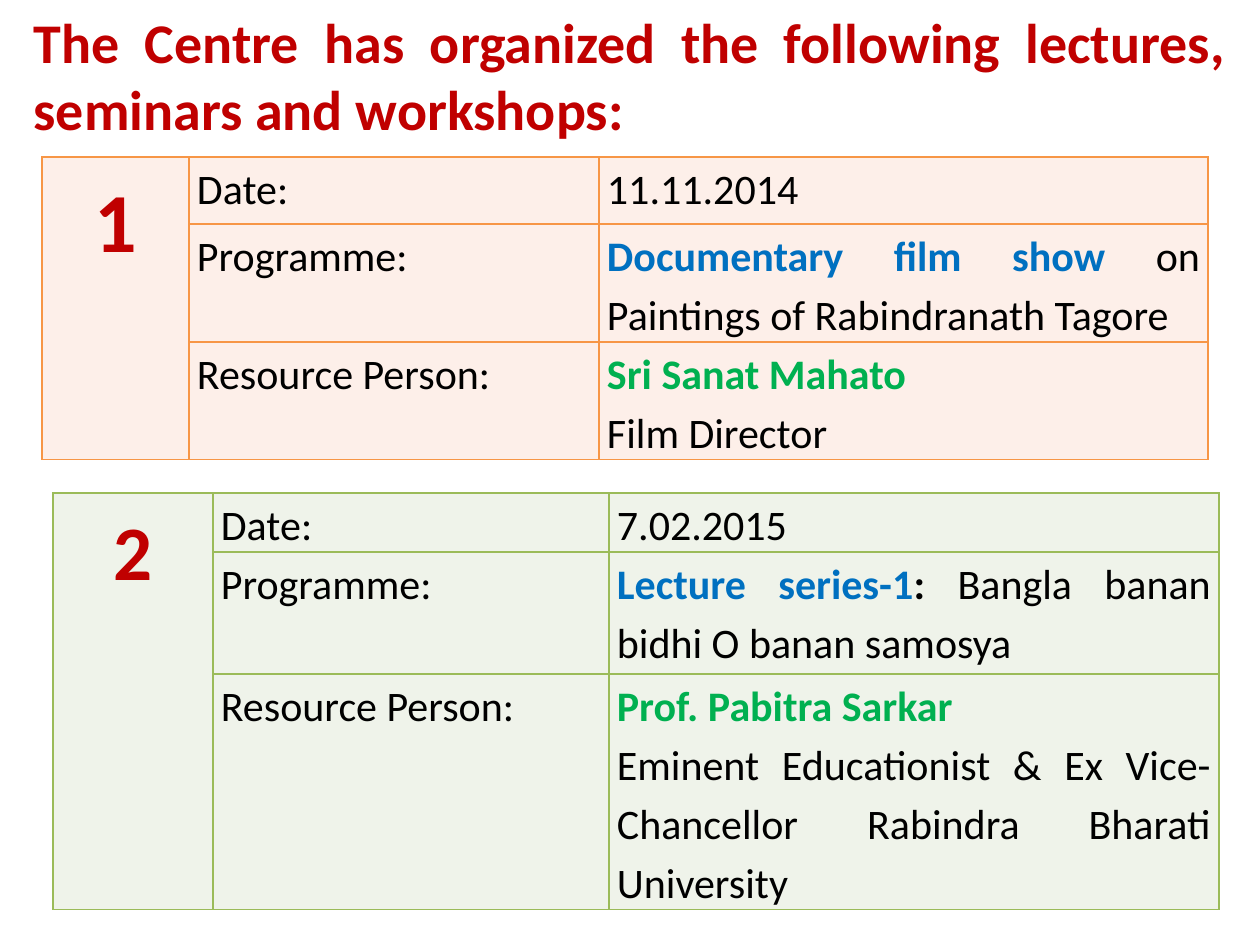
from lxml import etree
from pptx import Presentation, util as u
from pptx.dml.color import RGBColor
from pptx.enum import text
from pptx.oxml.ns import qn

RED = RGBColor(0xC0, 0x00, 0x00)
BLUE = RGBColor(0x00, 0x70, 0xC0)
GREEN = RGBColor(0x00, 0xB0, 0x50)
BLACK = RGBColor(0x00, 0x00, 0x00)
ORANGE = RGBColor(0xF7, 0x96, 0x46)
PEACH = RGBColor(0xFD, 0xEF, 0xE9)
OLIVE = RGBColor(0x9B, 0xBB, 0x59)
MINT = RGBColor(0xEF, 0xF3, 0xEA)

LABELS = ("Date:", "Programme:", "Resource Person:")


def px(n):
    """Turn pixels, 126 to the inch, into EMU."""
    return u.Emu(round(n * 914400 / 126))


class Deck:
    font = "Calibri"
    size = 24
    pad = 8
    lead = 1.15

    def __init__(self):
        self.prs = Presentation()
        self.prs.slide_width, self.prs.slide_height = px(1260), px(945)
        self.slide = self.prs.slides.add_slide(self.prs.slide_layouts[5])

    def style(self, font, size, color, bold):
        font.name, font.size = self.font, u.Pt(size)
        font.color.rgb, font.bold = color, bold

    def title(self, words, box):
        shape = self.slide.shapes.title
        shape.left, shape.top, shape.width, shape.height = map(px, box)
        frame = shape.text_frame
        frame.text = words
        frame.word_wrap = True
        frame.auto_size = text.MSO_AUTO_SIZE.NONE
        frame.vertical_anchor = text.MSO_ANCHOR.MIDDLE
        para = frame.paragraphs[0]
        para.alignment = text.PP_ALIGN.JUSTIFY
        self.style(para.font, 32, RED, True)

    def edge(self, cell, color):
        """Draw a thin line on all four sides of a cell."""
        props = cell._tc.get_or_add_tcPr()
        for i, tag in enumerate(("a:lnL", "a:lnR", "a:lnT", "a:lnB")):
            line = etree.Element(qn(tag), w=str(u.Pt(1)))
            fill = etree.SubElement(line, qn("a:solidFill"))
            etree.SubElement(fill, qn("a:srgbClr"), val=str(color))
            props.insert(i, line)

    def put(self, cell, lines, size=size, align=text.PP_ALIGN.JUSTIFY):
        """Fill a cell with lines, each a list of (words, color, bold)."""
        frame = cell.text_frame
        for i, runs in enumerate(lines):
            para = frame.add_paragraph() if i else frame.paragraphs[0]
            para.alignment, para.line_spacing = align, self.lead
            if len(runs) == 1:
                self.style(para.font, size, *runs[0][1:])
            for words, color, bold in runs:
                run = para.add_run()
                run.text = words
                if len(runs) > 1:
                    self.style(run.font, size, color, bold)

    def event(self, spot, cols, rows, num, size, facts, line, fill):
        """Add a table with a number beside labelled facts."""
        table = self.slide.shapes.add_table(
            len(rows), len(cols), *map(px, (*spot, sum(cols), sum(rows)))).table
        table.first_row = table.horz_banding = False
        for col, wide in zip(table.columns, cols):
            col.width = px(wide)
        for row, high in zip(table.rows, rows):
            row.height = px(high)
        for cell in table.iter_cells():
            cell.margin_left = cell.margin_right = px(self.pad)
            cell.margin_top = cell.margin_bottom = 0
            cell.fill.solid()
            cell.fill.fore_color.rgb = fill
            self.edge(cell, line)
        head = table.cell(0, 0)
        head.merge(table.cell(len(rows) - 1, 0))
        self.put(head, [[(num, RED, True)]], size, text.PP_ALIGN.CENTER)
        for i, (label, lines) in enumerate(zip(LABELS, facts)):
            self.put(table.cell(i, 1), [[(label, BLACK, False)]])
            self.put(table.cell(i, 2), lines)


def main():
    deck = Deck()
    deck.title("The Centre has organized the following lectures, "
               "seminars and workshops:", (21, 0, 1218, 149))
    deck.event((42, 157), (147, 410, 609), (67, 116, 116), "1", 48, [
        [[("11.11.2014", BLACK, False)]],
        [[("Documentary film show ", BLUE, True),
          ("on Paintings of Rabindranath Tagore", BLACK, False)]],
        [[("Sri Sanat Mahato", GREEN, True)],
         [("Film Director", BLACK, False)]],
    ], ORANGE, PEACH)
    deck.event((53, 493), (160, 396, 610), (58, 122, 232), "2", 44, [
        [[("7.02.2015", BLACK, False)]],
        [[("Lecture series-1", BLUE, True), (": ", BLACK, True),
          ("Bangla banan bidhi O banan samosya", BLACK, False)]],
        [[("Prof. Pabitra Sarkar", GREEN, True)],
         [("Eminent Educationist & Ex Vice-Chancellor "
           "Rabindra Bharati University", BLACK, False)]],
    ], OLIVE, MINT)
    deck.prs.save("out.pptx")


if __name__ == "__main__":
    main()
